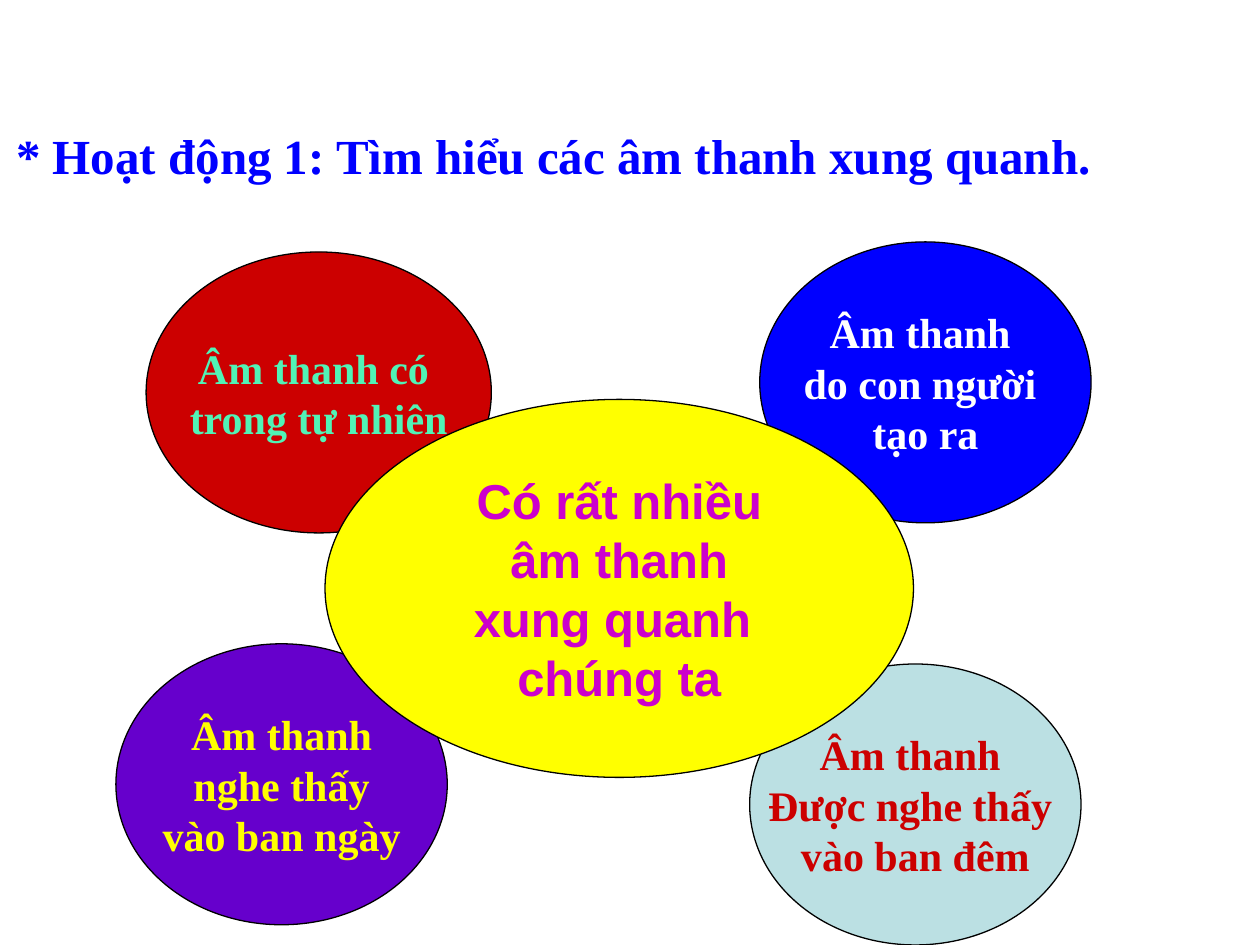
import pptx
import pptx.util
from pptx.dml.color import RGBColor
from pptx.enum.shapes import MSO_SHAPE
from pptx.enum.text import MSO_ANCHOR, MSO_AUTO_SIZE, PP_ALIGN
from pptx.util import Inches

COLORS = {
    "black": "000000",
    "white": "FFFFFF",
    "red": "CC0000",
    "mint": "51F3B6",
    "blue": "0000FF",
    "purple": "6600CC",
    "yellow": "FFFF00",
    "pale_teal": "BBE0E3",
    "magenta": "CC00CC",
}
SERIF = "Times New Roman"
SANS = "Arial"

# left, top, width, fill, text colour, lines
SOUND_KINDS = [
    (1.16, 2, 2.74, "red", "mint", ["Âm thanh có ", "trong tự nhiên"]),
    (6.03, 1.92, 2.63, "blue", "white",
     ["Âm thanh ", "do con người ", "tạo ra"]),
    (0.92, 5.11, 2.63, "purple", "yellow",
     ["Âm thanh", " nghe thấy ", "vào ban ngày"]),
    (5.95, 5.27, 2.63, "pale_teal", "red",
     ["Âm thanh ", "Được nghe thấy ", "vào ban đêm"]),
]
SOUND_HEIGHT = 2.23
CENTER_LINES = ["Có rất nhiều", " âm thanh ", "xung quanh ", "chúng ta"]


def rgb(name):
    return RGBColor.from_string(COLORS[name])


def write_lines(tf, lines, font, size, color, align):
    for i, line in enumerate(lines):
        p = tf.paragraphs[0] if i == 0 else tf.add_paragraph()
        p.text = line
        p.alignment = align
        p.font.name = font
        p.font.size = pptx.util.Pt(size)
        p.font.bold = True
        p.font.color.rgb = rgb(color)


def add_ellipse(s, left, top, width, height, fill, color, lines, font, size):
    sp = s.shapes.add_shape(MSO_SHAPE.OVAL, Inches(left), Inches(top),
                            Inches(width), Inches(height))
    sp.shadow.inherit = False
    sp.fill.solid()
    sp.fill.fore_color.rgb = rgb(fill)
    sp.line.color.rgb = rgb("black")
    sp.line.width = pptx.util.Pt(0.75)
    tf = sp.text_frame
    tf.word_wrap = False
    tf.vertical_anchor = MSO_ANCHOR.MIDDLE
    write_lines(tf, lines, font, size, color, PP_ALIGN.CENTER)


def add_heading(s, text):
    sp = s.shapes.add_textbox(Inches(0.03), Inches(0.95), Inches(10), Inches(0.57))
    tf = sp.text_frame
    tf.word_wrap = True
    tf.auto_size = MSO_AUTO_SIZE.SHAPE_TO_FIT_TEXT
    write_lines(tf, [text], SERIF, 28, "blue", PP_ALIGN.LEFT)


def main():
    prs = pptx.Presentation()
    prs.slide_width, prs.slide_height = Inches(10), Inches(7.5)
    s = prs.slides.add_slide(prs.slide_layouts[6])
    for left, top, width, fill, color, lines in SOUND_KINDS:
        add_ellipse(s, left, top, width, SOUND_HEIGHT, fill, color, lines, SERIF, 24)
    add_ellipse(s, 2.58, 3.17, 4.67, 3, "yellow", "magenta", CENTER_LINES, SANS, 28)
    add_heading(s, "* Hoạt động 1: Tìm hiểu các âm thanh xung quanh.")
    prs.save("out.pptx")


if __name__ == "__main__":
    main()
